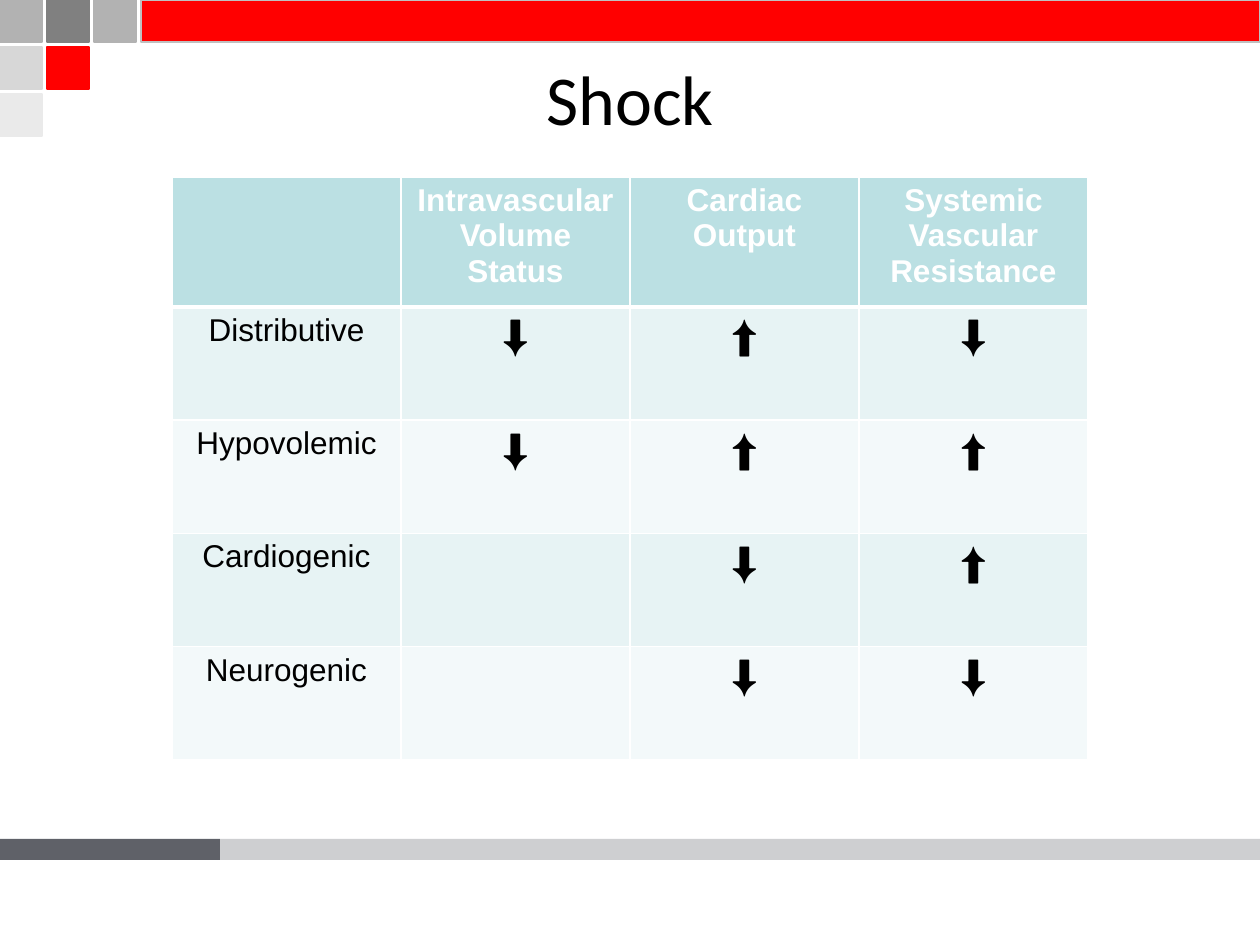
from lxml.etree import SubElement
from pptx import Presentation
from pptx.dml.color import RGBColor
from pptx.enum.shapes import MSO_SHAPE
from pptx.enum.text import MSO_ANCHOR, PP_ALIGN
from pptx.oxml.ns import qn
from pptx.util import Pt

SCALE = 914400 / 126  # EMU in one px

COLORS = {
    "red": "FF0000", "mid": "B2B2B2", "dark": "808080", "light": "D7D7D7",
    "pale": "EAEAEA", "edge": "C0C0C0", "slate": "5F6168",
    "white": "FFFFFF", "black": "000000",
    "header": "BBE0E3", "odd": "E7F3F4", "even": "F3F9FA",
}

HEADERS = ["", "Intravascular Volume Status", "Cardiac Output",
           "Systemic Vascular Resistance"]
SHOCK_TYPES = [
    ["Distributive", "⬇", "⬆", "⬇"],
    ["Hypovolemic", "⬇", "⬆", "⬆"],
    ["Cardiogenic", "", "⬇", "⬆"],
    ["Neurogenic", "", "⬇", "⬇"],
]


def px(n):
    return round(n * SCALE)


def rgb(name):
    return RGBColor.from_string(COLORS[name])


def add_rect(s, x, y, w, h, fill, line=None, alpha=None):
    sp = s.shapes.add_shape(MSO_SHAPE.RECTANGLE, px(x), px(y), px(w), px(h))
    sp.shadow.inherit = False
    sp.fill.solid()
    sp.fill.fore_color.rgb = rgb(fill)
    if alpha is not None:
        color = sp.fill._xPr.find(".//" + qn("a:srgbClr"))
        SubElement(color, qn("a:alpha"), val=str(alpha * 1000))
    if line:
        sp.line.color.rgb = rgb(line)
        sp.line.width = Pt(0.75)
    else:
        sp.line.fill.background()


def style_paragraph(p, text, font, size, color, bold=False):
    p.text = text
    p.alignment = PP_ALIGN.CENTER
    p.font.name = font
    p.font.size = Pt(size)
    p.font.bold = bold
    p.font.color.rgb = rgb(color)


def add_header_band(s, x, y, w):
    # Staircase of squares, then the red bar
    size, step = 42, 47
    stairs = [["mid", "dark", "mid"], ["light", "red"], ["pale"]]
    for row, fills in enumerate(stairs):
        for col, fill in enumerate(fills):
            add_rect(s, x + col * step, y + row * step, size, size, fill, fill)
    bar_x = len(stairs) * step
    add_rect(s, x + bar_x, y, w - bar_x, size, "red", "edge")


def add_footer_band(s, x, y, w, h):
    dark_w = 220
    add_rect(s, x, y, dark_w, h, "slate")
    add_rect(s, x + dark_w, y, w - dark_w, h, "slate", alpha=30)


def add_title(s, x, y, w, h):
    tf = s.shapes.add_textbox(px(x), px(y), px(w), px(h)).text_frame
    tf.word_wrap = True
    tf.vertical_anchor = MSO_ANCHOR.MIDDLE
    style_paragraph(tf.paragraphs[0], "Shock", "Calibri", 40, "black")


def set_borders(cell, top, bottom):
    tc_pr = cell._tc.get_or_add_tcPr()
    for side, width in (("L", 1), ("R", 1), ("T", top), ("B", bottom)):
        ln = SubElement(tc_pr, qn("a:ln" + side), w=str(Pt(width)))
        fill = SubElement(ln, qn("a:solidFill"))
        SubElement(fill, qn("a:srgbClr"), val=COLORS["white"])


def add_shock_table(s, x, y, w, h):
    rows = [HEADERS] + SHOCK_TYPES
    header_h = 130
    table = s.shapes.add_table(len(rows), len(HEADERS),
                               px(x), px(y), px(w), px(h)).table
    for column in table.columns:
        column.width = px(w / len(HEADERS))
    for i, values in enumerate(rows):
        is_header = i == 0
        table.rows[i].height = px(header_h if is_header
                                  else (h - header_h) / len(SHOCK_TYPES))
        fill = "header" if is_header else "odd" if i % 2 else "even"
        for j, text in enumerate(values):
            cell = table.cell(i, j)
            cell.margin_left = cell.margin_right = px(9)
            cell.margin_top = cell.margin_bottom = px(6)
            # The rule under the header is thicker
            set_borders(cell, 3 if i == 1 else 1, 3 if is_header else 1)
            cell.fill.solid()
            cell.fill.fore_color.rgb = rgb(fill)
            size = 24 if text in ("⬆", "⬇") else 18
            style_paragraph(cell.text_frame.paragraphs[0], text, "Arial", size,
                            "white" if is_header else "black", is_header)


def main():
    prs = Presentation()
    prs.slide_width, prs.slide_height = px(1260), px(945)
    s = prs.slides.add_slide(prs.slide_layouts[6])
    add_header_band(s, 0, 0, 1260)
    add_footer_band(s, 0, 839, 1260, 21)
    add_shock_table(s, 172, 177, 916, 583)
    add_title(s, 126, 48, 1008, 98)
    prs.save("out.pptx")


if __name__ == "__main__":
    main()
